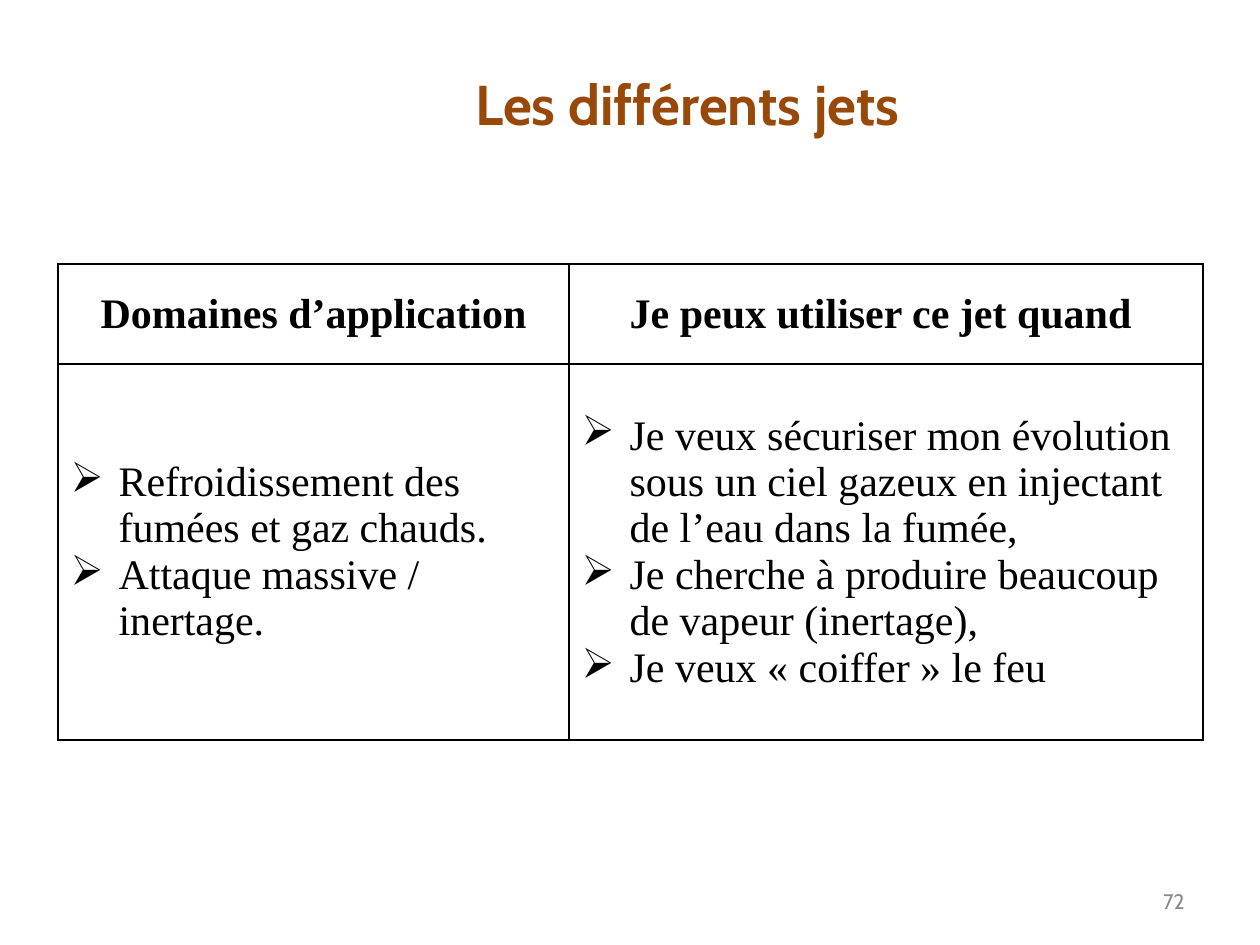
from dataclasses import dataclass

from lxml.etree import SubElement
from pptx import Presentation
from pptx.dml.color import RGBColor as Rgb
from pptx.enum.text import MSO_ANCHOR as Anchor, PP_ALIGN as Align
from pptx.oxml.ns import qn
from pptx.util import Emu, Pt

PX = 914400 / 126


@dataclass(frozen=True)
class Theme:
    """Hold the colours, faces and type sizes of the slide."""

    brown: str = "984807"
    grey: str = "898989"
    black: str = "000000"
    sans: str = "Cabin"
    serif: str = "Times New Roman"
    title: int = 32
    body: int = 24
    small: int = 12
    border: int = 1


THEME = Theme()
TITLE = {"name": THEME.sans, "size": Pt(THEME.title), "bold": True}
NUMBER = {"name": THEME.sans, "size": Pt(THEME.small), "bold": False}
HEADING = {"name": THEME.serif, "size": Pt(THEME.body), "bold": True}
BODY = {**HEADING, "bold": False}

COLUMNS = [
    (
        511,
        "Domaines d’application",
        ["Refroidissement des fumées et gaz chauds.", "Attaque massive / inertage."],
    ),
    (
        634,
        "Je peux utiliser ce jet quand ",
        [
            "Je veux sécuriser mon évolution sous un ciel gazeux en injectant "
            "de l’eau dans la fumée,",
            "Je cherche à produire beaucoup de vapeur (inertage),",
            "Je veux « coiffer » le feu",
        ],
    ),
]


def px(length):
    """Turn a length in px into EMU."""
    return Emu(round(length * PX))


def write(paragraph, words, style, color, align):
    """Put one styled run into a paragraph."""
    paragraph.alignment = align
    run = paragraph.add_run()
    run.text = words
    for attribute, value in style.items():
        setattr(run.font, attribute, value)
    run.font.color.rgb = Rgb.from_string(color)


def add_label(slide, box, words, style, color, align):
    """Place a line of text, vertically centred in its box."""
    frame = slide.shapes.add_textbox(*map(px, box)).text_frame
    frame.word_wrap = True
    frame.vertical_anchor = Anchor.MIDDLE
    write(frame.paragraphs[0], words, style, color, align)


def add_bullet(paragraph, indent):
    """Give a paragraph a hanging arrow bullet."""
    properties = paragraph._p.get_or_add_pPr()
    properties.set("marL", str(px(indent)))
    properties.set("indent", str(-px(indent)))
    SubElement(properties, qn("a:buChar"), char="➢")


def format_cell(cell):
    """Centre a cell vertically, rule its four sides and clear its fill."""
    cell.vertical_anchor = Anchor.MIDDLE
    properties = cell._tc.get_or_add_tcPr()
    for side in "LRTB":
        line = SubElement(properties, qn(f"a:ln{side}"), w=str(Pt(THEME.border)))
        fill = SubElement(line, qn("a:solidFill"))
        SubElement(fill, qn("a:srgbClr"), val=THEME.black)
    cell.fill.background()


def add_jet_table(slide, box, heading_height):
    """Place the table of uses and conditions in its box."""
    height = box[3]
    table = slide.shapes.add_table(2, len(COLUMNS), *map(px, box)).table
    table.first_row = table.horz_banding = False
    table.rows[0].height = px(heading_height)
    table.rows[1].height = px(height - heading_height)
    for index, (width, heading, points) in enumerate(COLUMNS):
        table.columns[index].width = px(width)
        top, bottom = table.cell(0, index), table.cell(1, index)
        format_cell(top)
        format_cell(bottom)
        write(top.text_frame.paragraphs[0], heading, HEADING, THEME.black, Align.CENTER)
        frame = bottom.text_frame
        for order, point in enumerate(points):
            paragraph = frame.add_paragraph() if order else frame.paragraphs[0]
            add_bullet(paragraph, 48)
            write(paragraph, point, BODY, THEME.black, Align.LEFT)


def main():
    """Build the slide and save it."""
    deck = Presentation()
    deck.slide_width, deck.slide_height = px(1260), px(945)
    slide = deck.slides.add_slide(deck.slide_layouts[6])
    add_label(slide, (903, 876, 294, 50), "72", NUMBER, THEME.grey, Align.RIGHT)
    add_label(slide, (154, 38, 1067, 130), "Les différents jets", TITLE, THEME.brown, Align.CENTER)
    table_width = sum(width for width, *_ in COLUMNS)
    add_jet_table(slide, (58, 264, table_width, 476), heading_height=100)
    deck.save("out.pptx")


if __name__ == "__main__":
    main()
